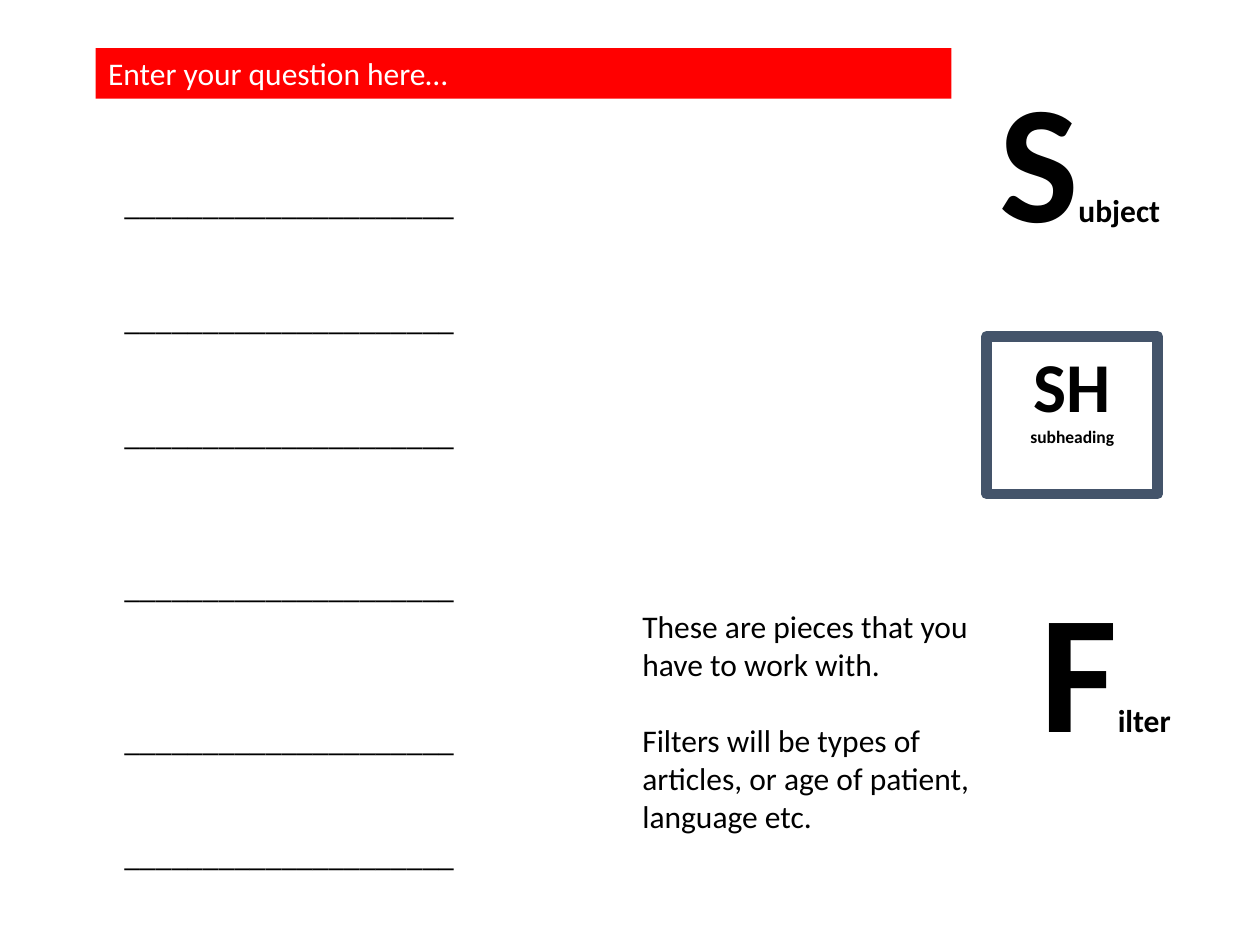
from dataclasses import dataclass

from pptx import Presentation
from pptx.dml.color import RGBColor
from pptx.enum.shapes import MSO_SHAPE
from pptx.enum.text import MSO_ANCHOR, PP_ALIGN
from pptx.util import Cm, Pt

RECTANGLE = MSO_SHAPE.RECTANGLE
TOP = MSO_ANCHOR.TOP
LEFT, CENTER = PP_ALIGN.LEFT, PP_ALIGN.CENTER


@dataclass(frozen=True)
class Theme:
    font: str = "Calibri"
    ink: RGBColor = RGBColor(0x00, 0x00, 0x00)
    white: RGBColor = RGBColor(0xFF, 0xFF, 0xFF)
    banner: RGBColor = RGBColor(0xFF, 0x00, 0x00)
    frame: RGBColor = RGBColor(0x44, 0x54, 0x6A)
    initial: int = 96
    heading: int = 40
    body: int = 18
    small: int = 10


THEME = Theme()
BODY_LINE = 22  # height in points of one line of body text


def add_span(para, text, size=THEME.body, color=THEME.ink, bold=False):
    span = para.add_run()
    span.text = text
    span.font.name = THEME.font
    span.font.size = Pt(size)
    span.font.color.rgb = color
    span.font.bold = bold


def add_box(page, left, top, width, height, preset=None, wrap=True):
    place = (Cm(left), Cm(top), Cm(width), Cm(height))
    if preset is None:
        box = page.shapes.add_textbox(*place)
    else:
        box = page.shapes.add_shape(preset, *place)
        box.shadow.inherit = False
        box.fill.background()
        box.line.fill.background()
    box.text_frame.word_wrap = wrap
    box.text_frame.vertical_anchor = TOP
    return box


deck = Presentation()
deck.slide_width, deck.slide_height = Cm(25.4), Cm(19.05)
page = deck.slides.add_slide(deck.slide_layouts[6])

# Subject and filter pieces: a large initial and the rest of the word
for initial, rest, left, top, width in (
    ("S", "ubject", 19.89, 0.97, 3.78),
    ("F", "ilter", 20.73, 11.25, 3.15),
):
    piece = add_box(page, left, top, width, 5.13, wrap=False)
    para = piece.text_frame.paragraphs[0]
    add_span(para, initial, THEME.initial, bold=True)
    add_span(para, rest, bold=True)

# Subheading piece
subheading = add_box(page, 19.89, 6.78, 3.45, 3.18, RECTANGLE)
subheading.line.color.rgb = THEME.frame
subheading.line.width = Pt(6)
para = subheading.text_frame.paragraphs[0]
para.alignment = CENTER
add_span(para, "SH ", THEME.heading, bold=True)
add_span(para, "subheading", THEME.small, bold=True)

# Question banner
banner = add_box(page, 1.93, 0.97, 17.25, 1.02, RECTANGLE)
banner.fill.solid()
banner.fill.fore_color.rgb = THEME.banner
para = banner.text_frame.paragraphs[0]
para.alignment = LEFT
add_span(para, "Enter your question here…", color=THEME.white)

# Answer lines, and the note on the pieces: (text, empty lines above)
answer = "_" * 21
answers = [(answer, gap) for gap in (0, 2, 2, 3, 3, 2)]
note = [
    ("These are pieces that you have to work with.", 0),
    ("Filters will be types of articles, or age of patient, language etc.", 1),
]
for left, top, height, lines in (
    (2.26, 3.59, 14.11, answers),
    (12.7, 12.12, 4.88, note),
):
    frame = add_box(page, left, top, 7.19, height).text_frame
    for index, (text, gap) in enumerate(lines):
        para = frame.add_paragraph() if index else frame.paragraphs[0]
        para.space_before = Pt(gap * BODY_LINE)
        add_span(para, text)

deck.save("out.pptx")
